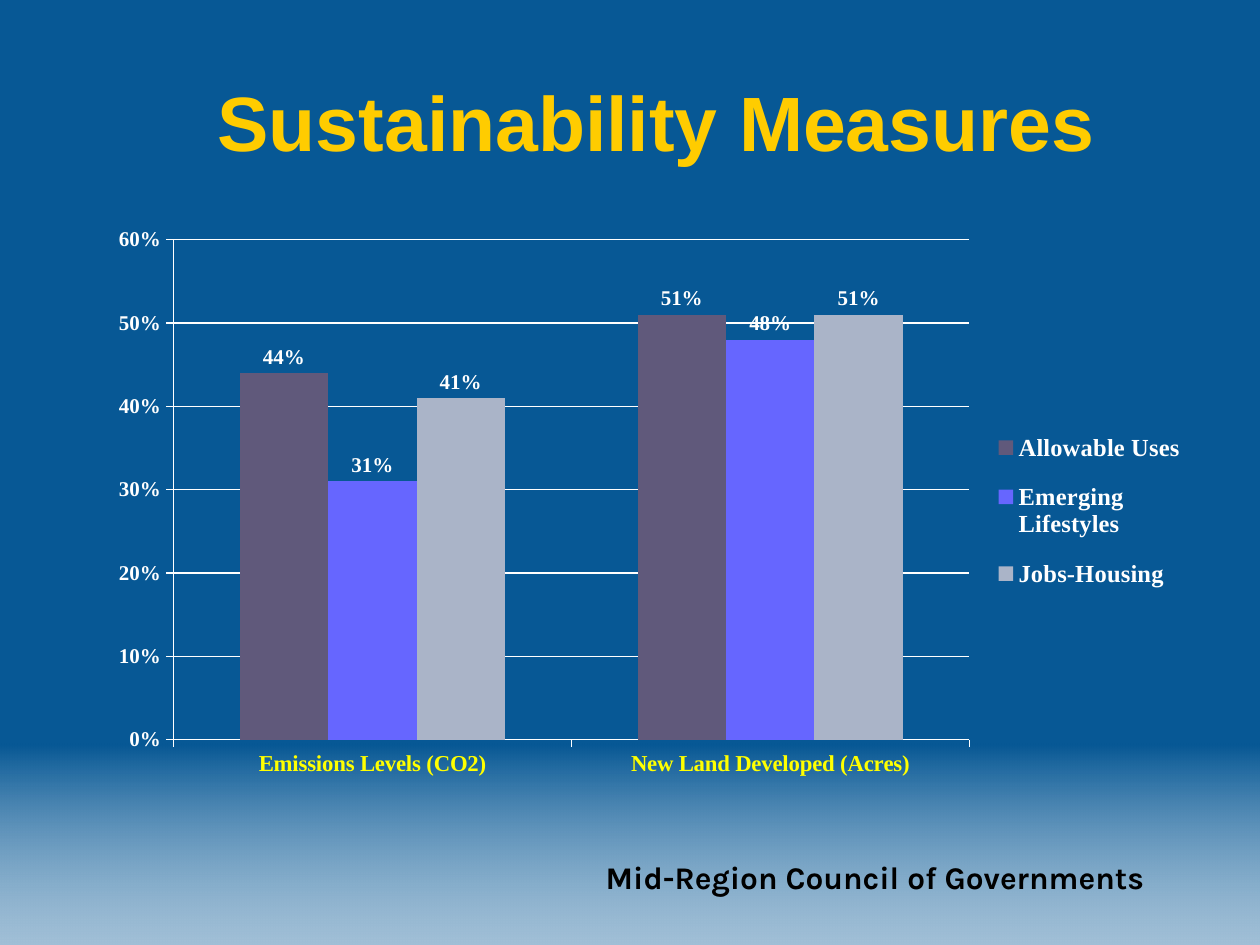
from lxml import etree
from pptx import Presentation
from pptx.chart.data import CategoryChartData
from pptx.dml.color import RGBColor
from pptx.enum.chart import XL_CHART_TYPE, XL_LABEL_POSITION, XL_LEGEND_POSITION, XL_TICK_MARK
from pptx.enum.shapes import MSO_SHAPE
from pptx.enum.text import MSO_ANCHOR, MSO_AUTO_SIZE, PP_ALIGN
from pptx.oxml.ns import qn
from pptx.util import Cm, Pt

COLUMNS = XL_CHART_TYPE.COLUMN_CLUSTERED
OUTSIDE_END = XL_LABEL_POSITION.OUTSIDE_END
LEGEND_RIGHT = XL_LEGEND_POSITION.RIGHT
TICK_OUTSIDE = XL_TICK_MARK.OUTSIDE
TICK_NONE = XL_TICK_MARK.NONE
RECTANGLE = MSO_SHAPE.RECTANGLE
MIDDLE = MSO_ANCHOR.MIDDLE
FIT_SHAPE = MSO_AUTO_SIZE.SHAPE_TO_FIT_TEXT
CENTER = PP_ALIGN.CENTER

BLUE = "075895"
WHITE = "FFFFFF"
GOLD = "FFCC00"
YELLOW = "FFFF00"
BLACK = "000000"

CATEGORIES = ["Emissions Levels (CO2)", "New Land Developed (Acres)"]
SCENARIOS = [
    ("Allowable Uses", (0.44, 0.51), "60597B"),
    ("Emerging Lifestyles", (0.31, 0.48), "6666FF"),
    ("Jobs-Housing", (0.41, 0.51), "AAB4C8"),
]


def color(value):
    return RGBColor.from_string(value)


class SlideBuilder:
    title_font = "Arial"
    footer_font = "Karla"
    chart_font = "Times New Roman"

    def __init__(self, presentation):
        self.slide = presentation.slides.add_slide(presentation.slide_layouts[5])

    def background(self, fill_color):
        fill = self.slide.background.fill
        fill.solid()
        fill.fore_color.rgb = color(fill_color)

    def format_font(self, font, size, font_color, name):
        font.name = name
        font.size = Pt(size)
        font.bold = True
        font.color.rgb = color(font_color)

    def fading_band(self, left, top, width, height, start, end, opacity):
        shape = self.slide.shapes.add_shape(RECTANGLE, left, top, width, height)
        shape.shadow.inherit = False
        shape.line.fill.background()
        shape.fill.gradient()
        shape.fill.gradient_angle = 270
        for stop, stop_color in zip(shape.fill.gradient_stops, (start, end)):
            stop.color.rgb = color(stop_color)
        last_color = list(shape._element.spPr.iter(qn("a:srgbClr")))[-1]
        etree.SubElement(last_color, qn("a:alpha"), val=str(opacity * 1000))

    def title(self, left, top, width, height, text):
        title = self.slide.shapes.title
        title.left, title.top, title.width, title.height = left, top, width, height
        title.text_frame.text = text
        title.text_frame.vertical_anchor = MIDDLE
        paragraph = title.text_frame.paragraphs[0]
        paragraph.alignment = CENTER
        self.format_font(paragraph.font, 44, GOLD, self.title_font)

    def footer(self, left, top, width, height, text):
        frame = self.slide.shapes.add_textbox(left, top, width, height).text_frame
        frame.word_wrap = False
        frame.auto_size = FIT_SHAPE
        frame.text = text
        self.format_font(frame.paragraphs[0].font, 18, BLACK, self.footer_font)

    def manual_layout(self, parent, position, bounds, inner=False):
        for old_layout in parent.findall(qn("c:layout")):
            parent.remove(old_layout)
        layout = etree.Element(qn("c:layout"))
        parent.insert(position, layout)
        manual = etree.SubElement(layout, qn("c:manualLayout"))
        if inner:
            etree.SubElement(manual, qn("c:layoutTarget"), val="inner")
        for mode in ("xMode", "yMode"):
            etree.SubElement(manual, qn(f"c:{mode}"), val="edge")
        for key, value in zip("xywh", bounds):
            etree.SubElement(manual, qn(f"c:{key}"), val=str(value))

    def format_axis(self, axis, size, font_color):
        axis.major_tick_mark = TICK_OUTSIDE
        axis.minor_tick_mark = TICK_NONE
        axis.format.line.color.rgb = color(WHITE)
        axis.format.line.width = Pt(0.75)
        self.format_font(axis.tick_labels.font, size, font_color, self.chart_font)

    def column_chart(self, left, top, width, height, categories, scenarios):
        data = CategoryChartData(number_format="0%")
        data.categories = categories
        for name, values, _ in scenarios:
            data.add_series(name, values)
        chart = self.slide.shapes.add_chart(COLUMNS, left, top, width, height, data).chart
        chart.has_title = False
        chart.font.name = self.chart_font
        chart.font.size = Pt(10)
        chart.font.color.rgb = color(WHITE)

        self.format_axis(chart.category_axis, 13, YELLOW)
        value_axis = chart.value_axis
        self.format_axis(value_axis, 12, WHITE)
        value_axis.minimum_scale = 0
        value_axis.maximum_scale = 0.6
        value_axis.major_unit = 0.1
        value_axis.tick_labels.number_format = "0%"
        value_axis.tick_labels.number_format_is_linked = False
        value_axis.has_major_gridlines = True
        gridline = value_axis.major_gridlines.format.line
        gridline.color.rgb = color(WHITE)
        gridline.width = Pt(0.75)

        plot = chart.plots[0]
        plot.gap_width = 150
        plot.overlap = 0
        plot.vary_by_categories = False
        for series, (_, _, fill_color) in zip(plot.series, scenarios):
            series.format.fill.solid()
            series.format.fill.fore_color.rgb = color(fill_color)
            labels = series.data_labels
            labels.show_value = True
            labels.position = OUTSIDE_END
            labels.number_format = "0%"
            labels.number_format_is_linked = False
            self.format_font(labels.font, 12, WHITE, self.chart_font)

        chart.has_legend = True
        legend = chart.legend
        legend.position = LEGEND_RIGHT
        legend.include_in_layout = False
        self.format_font(legend.font, 14, WHITE, self.chart_font)
        self.manual_layout(legend._element, 1, (0.81, 0.34, 0.18, 0.35))
        plot_area = chart._chartSpace.chart.plotArea
        self.manual_layout(plot_area, 0, (0.053, 0.034, 0.736, 0.888), inner=True)


def main():
    presentation = Presentation()
    presentation.slide_width = Cm(25.4)
    presentation.slide_height = Cm(19.05)
    builder = SlideBuilder(presentation)
    builder.background(BLUE)
    builder.fading_band(Cm(0), Cm(14.99), Cm(25.4), Cm(4.06), BLUE, WHITE, 62)
    builder.footer(Cm(11.96), Cm(17.17), Cm(11.99), Cm(1.02), "Mid-Region Council of Governments")
    builder.title(Cm(2.34), Cm(0.84), Cm(21.8), Cm(3.18), "Sustainability Measures")
    builder.column_chart(Cm(2.34), Cm(4.45), Cm(21.8), Cm(11.35), CATEGORIES, SCENARIOS)
    presentation.save("out.pptx")


if __name__ == "__main__":
    main()
